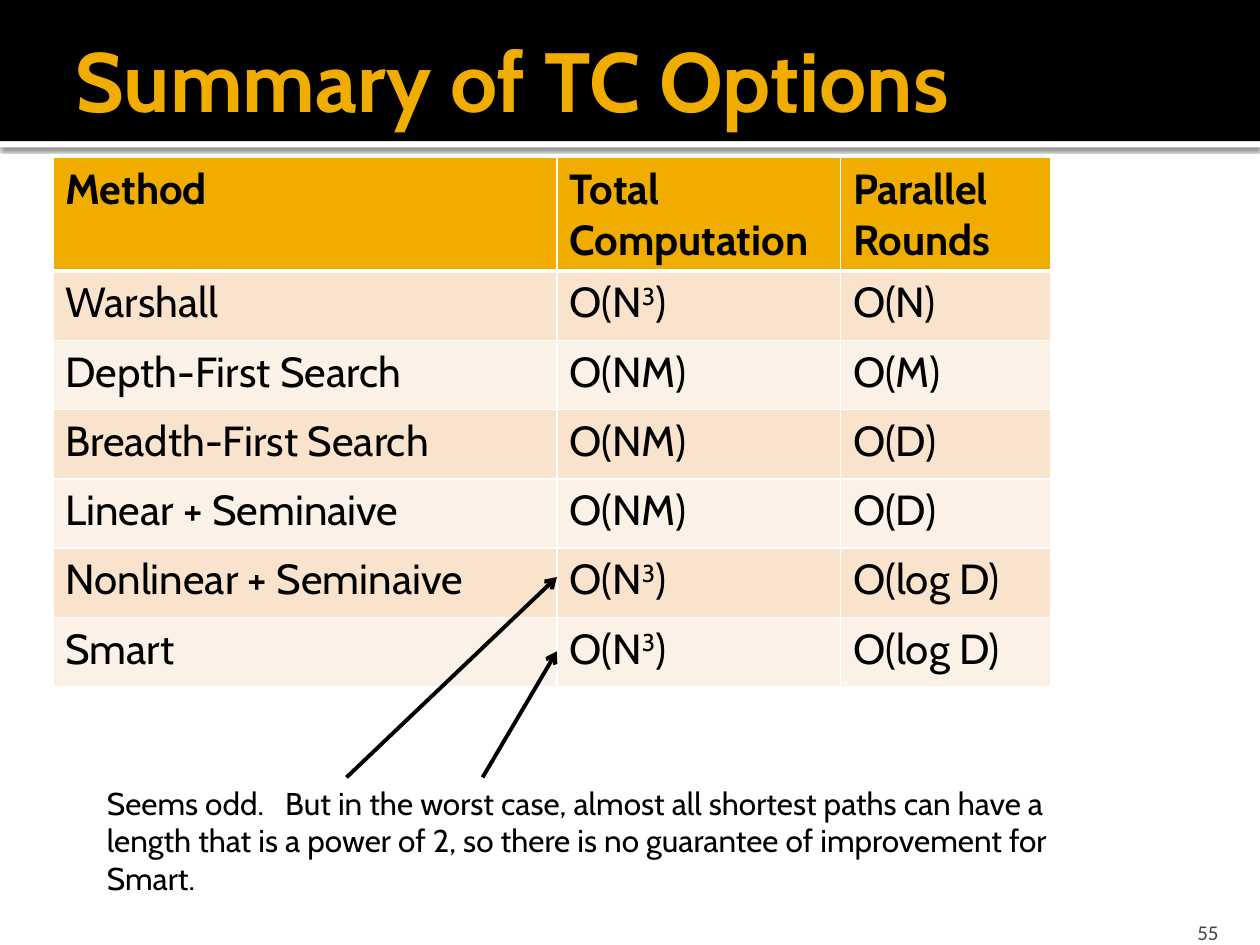
from lxml import etree
from pptx import Presentation
from pptx.dml.color import RGBColor
from pptx.enum import shapes, text
from pptx.oxml import ns, parse_xml
from pptx.util import Inches, Pt

BLACK = RGBColor(0x00, 0x00, 0x00)
WHITE = RGBColor(0xFF, 0xFF, 0xFF)
GOLD = RGBColor(0xF0, 0xAD, 0x00)
PEACH = RGBColor(0xF9, 0xE3, 0xCC)
CREAM = RGBColor(0xFC, 0xF1, 0xE7)
GRAY = RGBColor(0x45, 0x45, 0x45)

TITLE = "Summary of TC Options"
PAGE = "55"
ROWS = [
    ("Method", "Total Computation", "Parallel Rounds"),
    ("Warshall", "O(N^3)", "O(N)"),
    ("Depth-First Search", "O(NM)", "O(M)"),
    ("Breadth-First Search", "O(NM)", "O(D)"),
    ("Linear + Seminaive", "O(NM)", "O(D)"),
    ("Nonlinear + Seminaive", "O(N^3)", "O(log D)"),
    ("Smart", "O(N^3)", "O(log D)"),
]
COL_WIDTHS = [4, 2.25, 1.67]
HEADER_HEIGHT, ROW_HEIGHT = 0.85, 0.55
NOTE = [
    "Seems odd.   But in the worst case, almost all shortest paths can have a",
    "length that is a power of 2, so there is no guarantee of improvement for Smart.",
]
ARROWS = [((2.75, 6.17), (4.42, 4.58)), ((3.83, 6.17), (4.42, 5.17))]
BARS = [((0, 1.12, 10, 0.05), WHITE), ((0, 0, 10, 1.12), BLACK)]
BAR_SHADOW = (
    f'<a:effectLst {ns.nsdecls("a")}>'
    '<a:outerShdw blurRad="31750" dist="10160" dir="5400000" algn="tl" rotWithShape="0">'
    '<a:srgbClr val="000000"><a:alpha val="60000"/></a:srgbClr>'
    '</a:outerShdw></a:effectLst>'
)


def box(*lengths):
    return [Inches(v) for v in lengths]


def style(p, size, color, name="Cabin", bold=False):
    p.font.size, p.font.name, p.font.bold = Pt(size), name, bold
    p.font.color.rgb = color


def set_margins(tf, *margins):
    tf.margin_left, tf.margin_top, tf.margin_right, tf.margin_bottom = box(*margins)


def add_bar(s, at, color):
    sp = s.shapes.add_shape(shapes.MSO_SHAPE.RECTANGLE, *box(*at))
    sp.shadow.inherit = False
    sp.fill.solid()
    sp.fill.fore_color.rgb = color
    sp.line.fill.background()
    return sp


def add_borders(cell, bottom):
    tcPr = cell._tc.get_or_add_tcPr()
    for i, (side, width) in enumerate(zip("LRTB", (1, 1, 1, bottom))):
        ln = parse_xml(
            f'<a:ln{side} {ns.nsdecls("a")} w="{Pt(width)}"><a:solidFill>'
            f'<a:srgbClr val="{WHITE}"/></a:solidFill></a:ln{side}>'
        )
        tcPr.insert(i, ln)


def fill_cell(cell, words, row):
    header = row == 0
    cell.fill.solid()
    cell.fill.fore_color.rgb = GOLD if header else (PEACH if row % 2 else CREAM)
    add_borders(cell, 3 if header else 1)
    p = cell.text_frame.paragraphs[0]
    style(p, 24, BLACK, bold=header)
    base, caret, rest = words.partition("^")
    p.add_run().text = base
    if caret:
        r = p.add_run()
        r.text = rest[0]
        r._r.get_or_add_rPr().set("baseline", "30000")
        p.add_run().text = rest[1:]


def add_arrow(group, start, end):
    c = group.shapes.add_connector(shapes.MSO_CONNECTOR.STRAIGHT, *box(*start, *end))
    c.line.color.rgb = BLACK
    c.line.width = Pt(2.25)
    etree.SubElement(c.line._get_or_add_ln(), ns.qn("a:tailEnd"), type="arrow")
    etree.SubElement(c._element.spPr, ns.qn("a:effectLst"))


def main():
    prs = Presentation()
    prs.slide_width, prs.slide_height = box(10, 7.5)
    s = prs.slides.add_slide(prs.slide_layouts[5])

    bars = [add_bar(s, at, color) for at, color in BARS]
    effects = bars[0]._element.spPr
    effects.replace(effects.find(ns.qn("a:effectLst")), parse_xml(BAR_SHADOW))

    title = s.shapes.title
    s.shapes._spTree.append(title._element)
    title.left, title.top, title.width, title.height = box(0.5, 0.17, 9.5, 0.92)
    tf = title.text_frame
    tf.text = TITLE
    tf.auto_size = text.MSO_AUTO_SIZE.NONE
    tf.vertical_anchor = text.MSO_ANCHOR.MIDDLE
    set_margins(tf, 0.1, 0.05, 0.05, 0.05)
    p = tf.paragraphs[0]
    p.alignment = text.PP_ALIGN.LEFT
    style(p, 48, GOLD, bold=True)

    tf = s.shapes.add_textbox(*box(8.97, 7.2, 0.8, 0.3)).text_frame
    tf.text = PAGE
    tf.word_wrap = True
    tf.vertical_anchor = text.MSO_ANCHOR.BOTTOM
    set_margins(tf, 0.1, 0.05, 0.1, 0)
    p = tf.paragraphs[0]
    p.alignment = text.PP_ALIGN.RIGHT
    style(p, 12, GRAY, "Calibri")

    heights = [HEADER_HEIGHT] + [ROW_HEIGHT] * (len(ROWS) - 1)
    table = s.shapes.add_table(
        len(ROWS), len(COL_WIDTHS), *box(0.42, 1.25, sum(COL_WIDTHS), sum(heights))
    ).table
    for column, width in zip(table.columns, COL_WIDTHS):
        column.width = Inches(width)
    for i, (row, height) in enumerate(zip(ROWS, heights)):
        table.rows[i].height = Inches(height)
        for j, words in enumerate(row):
            fill_cell(table.cell(i, j), words, i)

    group = s.shapes.add_group_shape()
    tf = group.shapes.add_textbox(*box(0.75, 6.17, 8.29, 0.71)).text_frame
    tf.word_wrap = True
    tf.text = "\n".join(NOTE)
    for p in tf.paragraphs:
        style(p, 18, BLACK)
    for start, end in ARROWS:
        add_arrow(group, start, end)

    prs.save("out.pptx")


if __name__ == "__main__":
    main()
